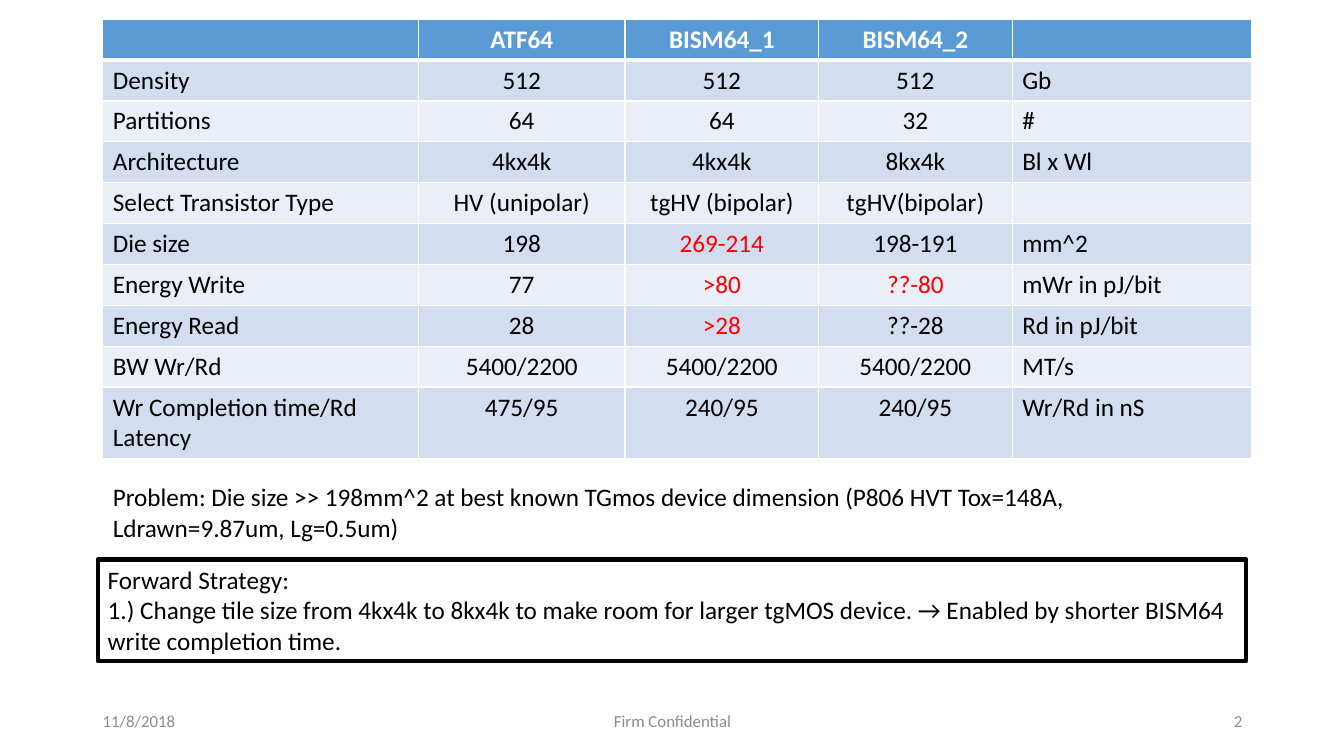
from lxml.etree import SubElement
from pptx import Presentation
from pptx.dml.color import RGBColor
from pptx.enum.shapes import MSO_SHAPE as Shape
from pptx.enum.text import MSO_ANCHOR as Anchor, PP_ALIGN as Align
from pptx.oxml import parse_xml
from pptx.oxml.ns import nsdecls, qn
from pptx.util import Inches, Pt

FONT = "Calibri"
BLACK, WHITE, RED, GRAY = "000000", "FFFFFF", "FF0000", "8C8C8C"
HEADER_FILL, BAND_FILLS = "5B9BD5", ("EAEFF7", "D2DEEF")

COLUMN_WIDTHS = [3.13, 2.05, 1.92, 1.92, 2.37]
ROWS = [
    ["", "ATF64", "BISM64_1", "BISM64_2", ""],
    ["Density", "512", "512", "512", "Gb"],
    ["Partitions", "64", "64", "32", "#"],
    ["Architecture", "4kx4k", "4kx4k", "8kx4k", "Bl x Wl"],
    ["Select Transistor Type", "HV (unipolar)", "tgHV (bipolar)", "tgHV(bipolar)", ""],
    ["Die size", "198", "269-214", "198-191", "mm^2"],
    ["Energy Write", "77", ">80", "??-80", "mWr in pJ/bit"],
    ["Energy Read", "28", ">28", "??-28", "Rd in pJ/bit"],
    ["BW Wr/Rd", "5400/2200", "5400/2200", "5400/2200", "MT/s"],
    ["Wr Completion time/Rd Latency", "475/95", "240/95", "240/95", "Wr/Rd in nS"],
]
RED_VALUES = {"269-214", ">80", "??-80", ">28"}

PROBLEM = ("Problem: Die size >> 198mm^2 at best known TGmos device dimension "
           "(P806 HVT Tox=148A, Ldrawn=9.87um, Lg=0.5um)")
STRATEGY = [
    "Forward Strategy:",
    "1.) Change tile size from 4kx4k to 8kx4k to make room for larger tgMOS device. "
    "→ Enabled by shorter BISM64 write completion time.",
]


def color(value):
    return RGBColor.from_string(value)


def write(text_frame, lines, size=18, text_color=BLACK, bold=False, align=Align.LEFT):
    for index, line in enumerate(lines):
        paragraph = text_frame.add_paragraph() if index else text_frame.paragraphs[0]
        paragraph.alignment = align
        run = paragraph.add_run()
        run.text = line
        run.font.name = FONT
        run.font.size = Pt(size)
        run.font.bold = bold
        run.font.color.rgb = color(text_color)


def set_borders(cell, top, bottom):
    """White borders; top and bottom widths in points."""
    properties = cell._tc.get_or_add_tcPr()
    sides = {"lnL": 1, "lnR": 1, "lnT": top, "lnB": bottom}
    for index, (side, width) in enumerate(sides.items()):
        line = parse_xml(f'<a:{side} {nsdecls("a")} w="{Pt(width)}"/>')
        fill = SubElement(line, qn("a:solidFill"))
        SubElement(fill, qn("a:srgbClr"), val=WHITE)
        properties.insert(index, line)


def fill_cell(cell, text, row, column):
    header = row == 0
    cell.fill.solid()
    cell.fill.fore_color.rgb = color(HEADER_FILL if header else BAND_FILLS[row % 2])
    set_borders(cell, top=3 if row == 1 else 1, bottom=3 if header else 1)
    if text:
        text_color = WHITE if header else RED if text in RED_VALUES else BLACK
        align = Align.CENTER if 0 < column < 4 else Align.LEFT
        write(cell.text_frame, [text], text_color=text_color, bold=header, align=align)
    if text == "77":
        cell.vertical_anchor = Anchor.MIDDLE
        cell.margin_left = cell.margin_right = cell.margin_top = cell.margin_bottom = 0


def add_comparison_table(slide):
    table = slide.shapes.add_table(
        len(ROWS), len(COLUMN_WIDTHS), Inches(1.02), Inches(0.19),
        Inches(sum(COLUMN_WIDTHS)), Inches(4.35)).table
    for column, width in zip(table.columns, COLUMN_WIDTHS):
        column.width = Inches(width)
    for row in table.rows:
        row.height = Inches(0.4)
    table.rows[len(ROWS) - 1].height = Inches(0.71)
    for row, texts in enumerate(ROWS):
        for column, text in enumerate(texts):
            fill_cell(table.cell(row, column), text, row, column)


def add_text(slide, left, top, width, height, text, anchor=Anchor.TOP, **style):
    box = slide.shapes.add_textbox(Inches(left), Inches(top), Inches(width), Inches(height))
    box.text_frame.word_wrap = True
    box.text_frame.vertical_anchor = anchor
    write(box.text_frame, [text], **style)


def add_strategy_box(slide):
    box = slide.shapes.add_shape(
        Shape.RECTANGLE, Inches(0.97), Inches(5.55), Inches(11.39), Inches(1.01))
    box.shadow.inherit = False
    box.fill.background()
    box.line.color.rgb = color(BLACK)
    box.line.width = Pt(3)
    box.text_frame.word_wrap = True
    box.text_frame.vertical_anchor = Anchor.TOP
    write(box.text_frame, STRATEGY)


def add_footer(slide):
    parts = [
        (0.92, 3, "11/8/2018", Align.LEFT),
        (4.42, 4.5, "Firm Confidential", Align.CENTER),
        (9.42, 3, "2", Align.RIGHT),
    ]
    for left, width, text, align in parts:
        add_text(slide, left, 6.95, width, 0.4, text, Anchor.MIDDLE,
                 size=12, text_color=GRAY, align=align)


def main():
    presentation = Presentation()
    presentation.slide_width = Inches(13.33)
    presentation.slide_height = Inches(7.5)
    slide = presentation.slides.add_slide(presentation.slide_layouts[6])

    # Comparison of the three designs
    add_comparison_table(slide)
    # Date, confidentiality note and page number
    add_footer(slide)
    # Strategy and problem statement
    add_strategy_box(slide)
    add_text(slide, 1.02, 4.73, 11.39, 0.71, PROBLEM)

    presentation.save("out.pptx")


if __name__ == "__main__":
    main()
